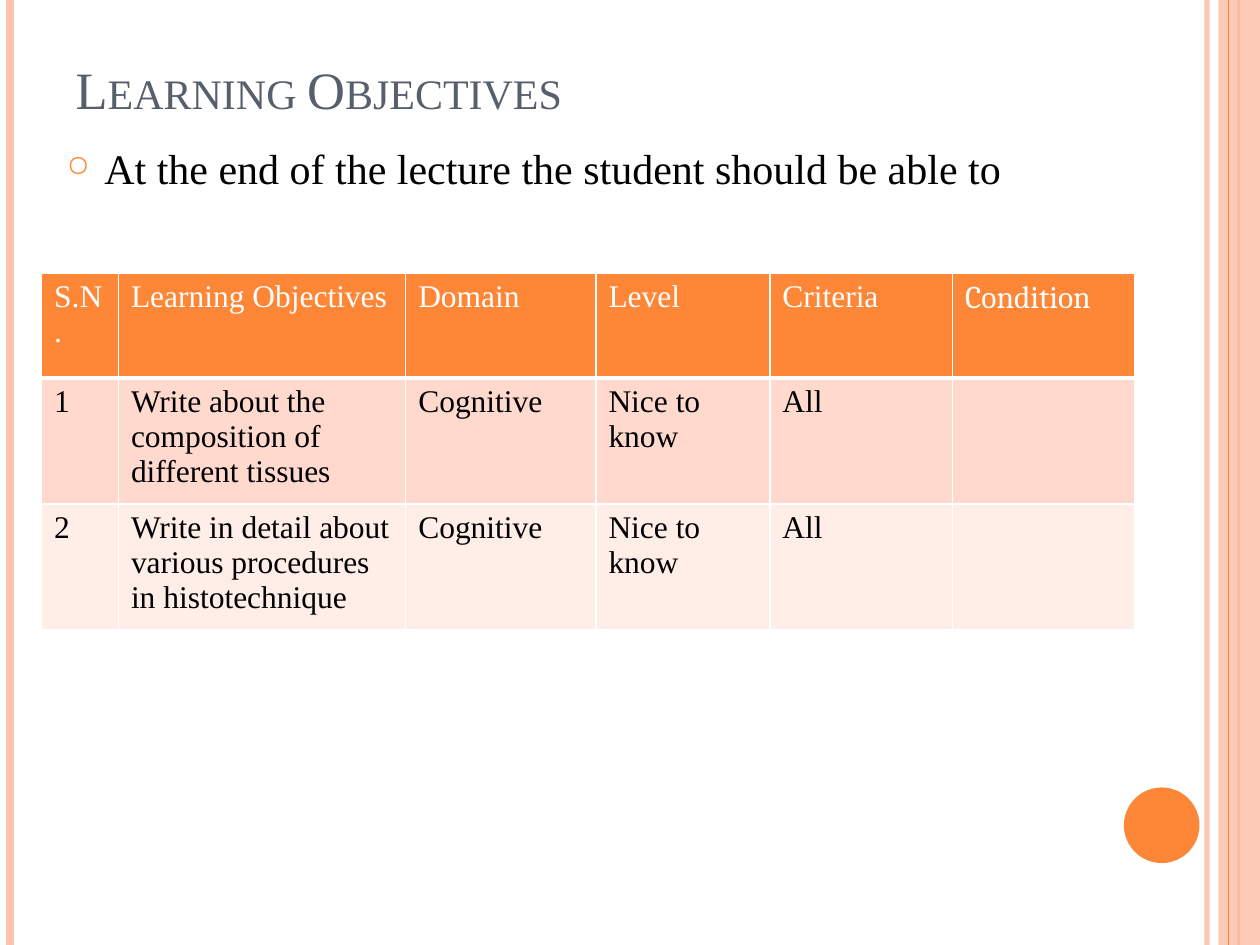
from dataclasses import dataclass

from lxml import etree
from pptx import Presentation
from pptx.dml.color import RGBColor
from pptx.enum.shapes import MSO_CONNECTOR, MSO_SHAPE
from pptx.enum.text import MSO_ANCHOR, PP_ALIGN
from pptx.oxml.ns import qn
from pptx.util import Inches, Pt

STRAIGHT = MSO_CONNECTOR.STRAIGHT
RECTANGLE, OVAL = MSO_SHAPE.RECTANGLE, MSO_SHAPE.OVAL
BOTTOM, LEFT = MSO_ANCHOR.BOTTOM, PP_ALIGN.LEFT
TITLE_ONLY = 5


@dataclass(frozen=True)
class Theme:
    orange: str = "FE8637"
    peach: str = "FEC3AE"
    slate: str = "575F6D"
    black: str = "000000"
    white: str = "FFFFFF"
    bands: tuple = ("FFD9CE", "FFEDE8")
    font: str = "Times New Roman"
    accent_font: str = "Cambria"
    title_size: int = 30
    body_size: int = 24
    table_size: int = 18


THEME = Theme()
COLUMN_WIDTHS = (0.61, 2.28, 1.51, 1.38, 1.45, 1.45)
ROW_HEIGHTS = (0.83, 0.93, 0.93)
OBJECTIVES = (
    ("S.N.", "Learning Objectives", "Domain", "Level", "Criteria", "Condition"),
    ("1", "Write about the composition of different tissues",
     "Cognitive", "Nice to know", "All", ""),
    ("2", "Write in detail about various procedures in histotechnique",
     "Cognitive", "Nice to know", "All", ""),
)


def rgb(color):
    return RGBColor.from_string(color)


def child(parent, tag, **attributes):
    return etree.SubElement(parent, qn(tag), attributes)


def set_opacity(fill, percent):
    """Make the solid colour of a fill partly transparent."""
    color = fill._xPr.find(".//" + qn("a:srgbClr"))
    child(color, "a:alpha", val=str(percent * 1000))


def style_font(paragraph, size, color, name=THEME.font):
    paragraph.font.size = Pt(size)
    paragraph.font.name = name
    paragraph.font.color.rgb = rgb(color)


def add_stripe(slide, x, color, width, opacity=100):
    """Draw a vertical line over the full slide height."""
    line = slide.shapes.add_connector(STRAIGHT, Inches(x), 0, Inches(x), Inches(7.5))
    line.line.color.rgb = rgb(color)
    line.line.width = Pt(width)
    if opacity < 100:
        set_opacity(line.line.fill, opacity)
    child(line._element.spPr, "a:effectLst")


def add_plain_shape(slide, kind, left, top, width, height, color, opacity=100):
    shape = slide.shapes.add_shape(
        kind, Inches(left), Inches(top), Inches(width), Inches(height))
    shape.shadow.inherit = False
    shape.fill.solid()
    shape.fill.fore_color.rgb = rgb(color)
    shape.line.fill.background()
    if opacity < 100:
        set_opacity(shape.fill, opacity)


def add_decoration(slide):
    add_stripe(slide, 9.58, THEME.peach, 3, opacity=93)
    add_stripe(slide, 0.08, THEME.peach, 4.5)
    add_stripe(slide, 9.83, THEME.orange, 1.5)
    add_plain_shape(slide, RECTANGLE, 9.67, 0, 0.33, 7.5, THEME.peach, opacity=87)
    add_stripe(slide, 9.75, THEME.orange, 0.75)
    add_plain_shape(slide, OVAL, 8.92, 6.25, 0.6, 0.6, THEME.orange)


def set_title(slide, text):
    title = slide.shapes.title
    title.left, title.top = Inches(0.5), Inches(-0.25)
    title.width, title.height = Inches(9), Inches(1.25)
    title.text_frame.text = text
    title.text_frame.vertical_anchor = BOTTOM
    paragraph = title.text_frame.paragraphs[0]
    paragraph.alignment = LEFT
    style_font(paragraph, THEME.title_size, THEME.slate)
    paragraph.runs[0].font._element.set("cap", "small")


def add_bullet_text(slide, text):
    box = slide.shapes.add_textbox(Inches(0.43), Inches(1.08), Inches(9), Inches(4.95))
    box.text_frame.word_wrap = True
    paragraph = box.text_frame.paragraphs[0]
    paragraph.text = text
    paragraph.space_before = Pt(6)
    properties = paragraph._p.get_or_add_pPr()
    properties.set("marL", str(Inches(0.3)))
    properties.set("indent", str(-Inches(0.3)))
    child(child(properties, "a:buClr"), "a:srgbClr", val=THEME.orange)
    child(properties, "a:buSzPct", val="70000")
    child(properties, "a:buChar", char="○")
    style_font(paragraph, THEME.body_size, THEME.black)


def set_borders(cell, bottom_width, top_width):
    """Draw white cell borders; they must precede the fill in the XML."""
    properties = cell._tc.get_or_add_tcPr()
    widths = {"a:lnL": 1, "a:lnR": 1, "a:lnT": top_width, "a:lnB": bottom_width}
    for tag, width in widths.items():
        line = child(properties, tag, w=str(Pt(width)))
        child(child(line, "a:solidFill"), "a:srgbClr", val=THEME.white)


def add_objectives_table(slide):
    frame = slide.shapes.add_table(
        len(OBJECTIVES), len(COLUMN_WIDTHS), Inches(0.33), Inches(2.17),
        Inches(sum(COLUMN_WIDTHS)), Inches(sum(ROW_HEIGHTS)))
    table = frame.table
    for column, width in zip(table.columns, COLUMN_WIDTHS):
        column.width = Inches(width)
    for row, height in zip(table.rows, ROW_HEIGHTS):
        row.height = Inches(height)
    for row_index, texts in enumerate(OBJECTIVES):
        is_header = row_index == 0
        fill = THEME.orange if is_header else THEME.bands[row_index - 1]
        color = THEME.white if is_header else THEME.black
        for column_index, text in enumerate(texts):
            cell = table.cell(row_index, column_index)
            cell.text = text
            font = THEME.accent_font if text == "Condition" else THEME.font
            style_font(cell.text_frame.paragraphs[0], THEME.table_size, color, font)
            set_borders(cell, bottom_width=3 if is_header else 1,
                        top_width=3 if row_index == 1 else 1)
            cell.fill.solid()
            cell.fill.fore_color.rgb = rgb(fill)


def main():
    presentation = Presentation()
    presentation.slide_width, presentation.slide_height = Inches(10), Inches(7.5)
    slide = presentation.slides.add_slide(presentation.slide_layouts[TITLE_ONLY])
    add_decoration(slide)
    set_title(slide, "Learning Objectives")
    add_bullet_text(slide, "At the end of the lecture the student should be able to")
    add_objectives_table(slide)
    presentation.save("out.pptx")


if __name__ == "__main__":
    main()
